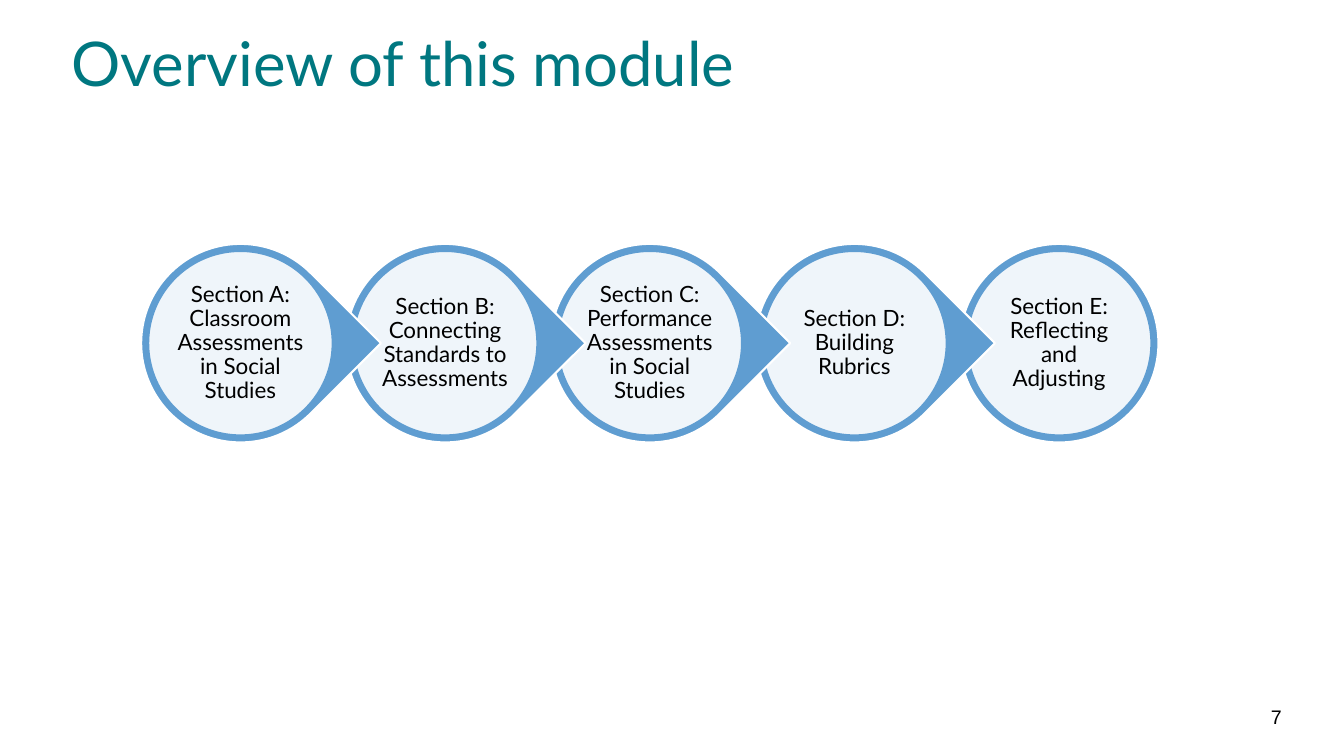
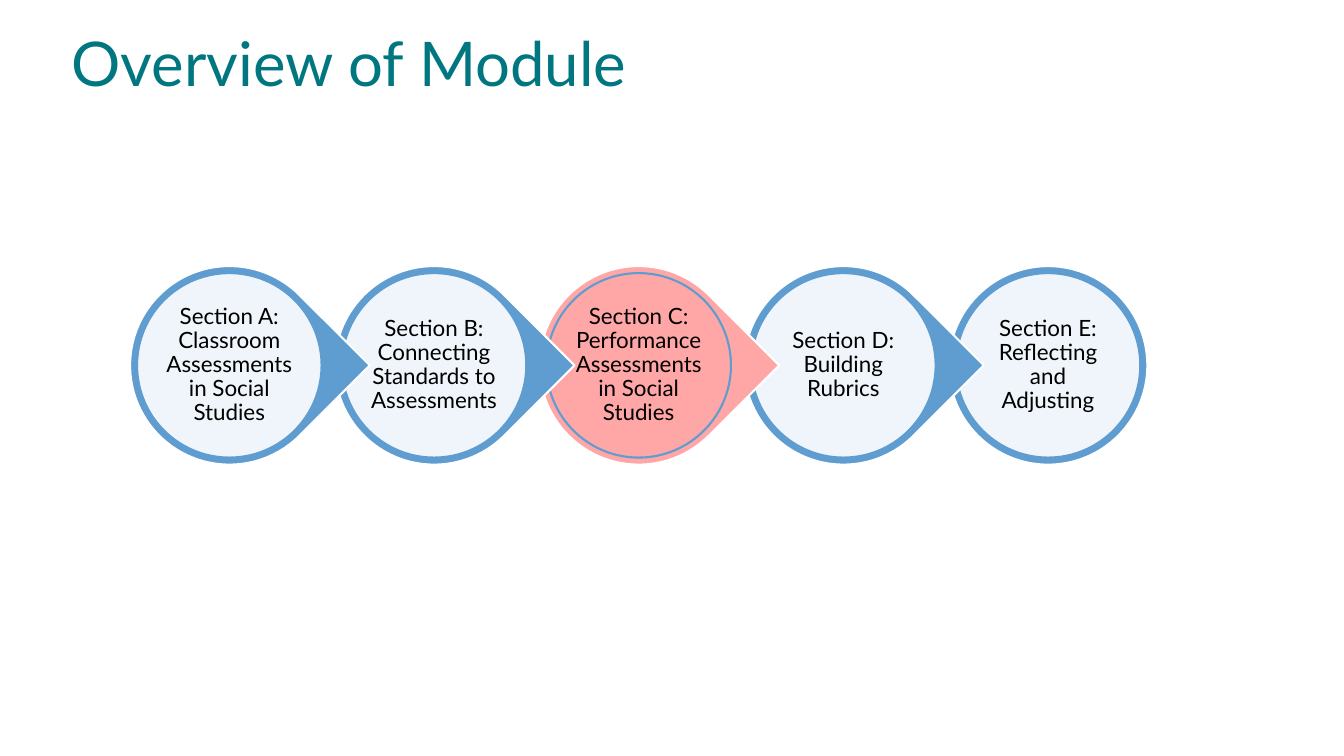
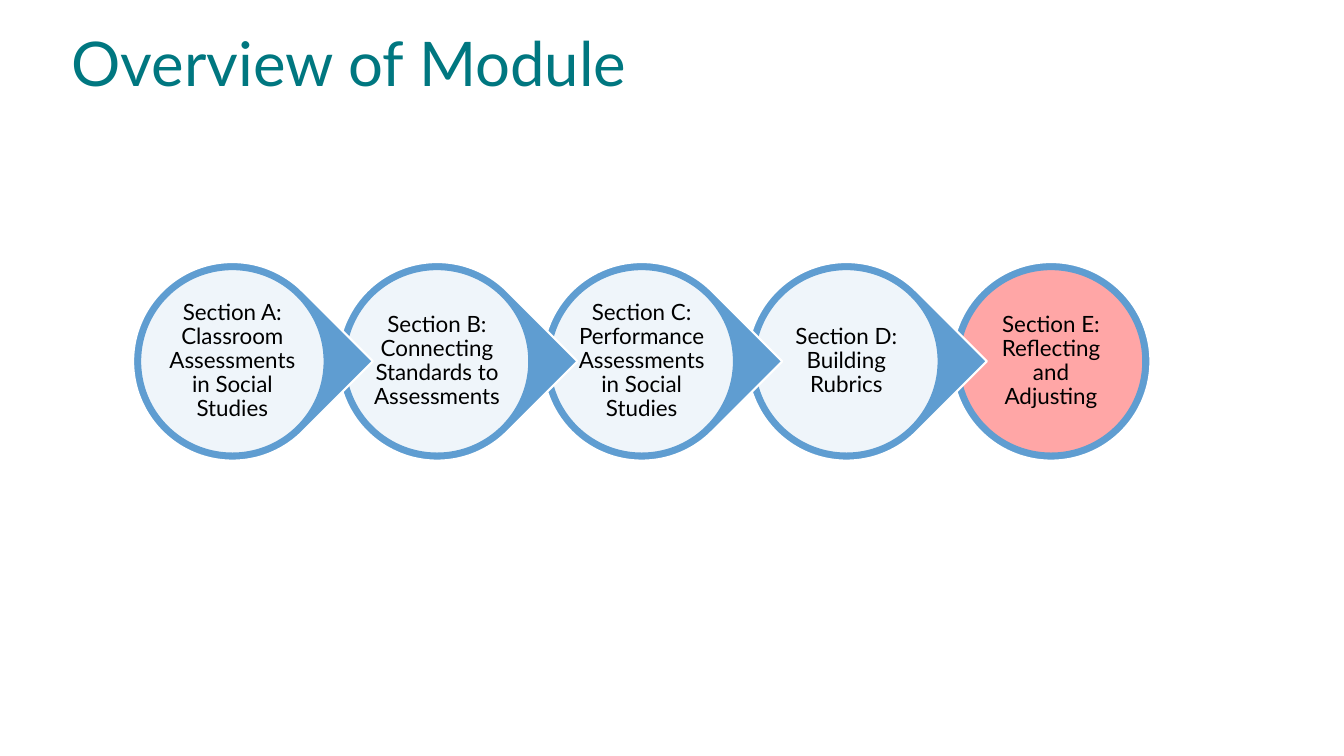
from lxml.etree import SubElement
from pptx import Presentation
from pptx.dml.color import RGBColor
from pptx.enum.shapes import MSO_SHAPE
from pptx.enum.text import MSO_ANCHOR, MSO_AUTO_SIZE, PP_ALIGN
from pptx.oxml.ns import qn
from pptx.util import Inches, Pt

TEAL = RGBColor(0x00, 0x77, 0x80)
BLUE = RGBColor(0x5F, 0x9D, 0xD1)
PINK = RGBColor(0xFF, 0xA6, 0xA6)
WHITE = RGBColor(0xFF, 0xFF, 0xFF)
BLACK = RGBColor(0x00, 0x00, 0x00)

TITLE_ONLY = 5
MARKER_SIZE = 1.97
MARKER_PITCH = 2.03
DISC_INSET = 0.07
DISC_OPACITY = 90

SECTIONS = [
    ["Section A: Classroom Assessments in Social Studies"],
    ["Section B: Connecting Standards to Assessments"],
    ["Section C: Performance Assessments in Social Studies"],
    ["Section D:", "Building Rubrics"],
    ["Section E: Reflecting and Adjusting"],
]


def write_lines(paragraph, lines, font_name, size, color):
    """Add lines to a paragraph as runs parted by line breaks."""
    for index, line in enumerate(lines):
        if index:
            paragraph.add_line_break()
        run = paragraph.add_run()
        run.text = line
        run.font.name = font_name
        run.font.size = Pt(size)
        run.font.color.rgb = color


def add_titled_slide(presentation, title_text):
    """Add a title-only slide with the shared title style."""
    slide = presentation.slides.add_slide(presentation.slide_layouts[TITLE_ONLY])
    title = slide.shapes.title
    title.left, title.top = Inches(0.61), Inches(0.28)
    title.width, title.height = Inches(9.4), Inches(1.44)
    frame = title.text_frame
    frame.auto_size = MSO_AUTO_SIZE.NONE
    frame.vertical_anchor = MSO_ANCHOR.TOP
    paragraph = frame.paragraphs[0]
    paragraph.alignment = PP_ALIGN.LEFT
    paragraph.line_spacing = 0.9
    write_lines(paragraph, [title_text], "Lato", 44, TEAL)
    return slide


def add_page_number(slide, number):
    """Add the page number at the lower right."""
    box = slide.shapes.add_textbox(Inches(12.06), Inches(6.91), Inches(0.75), Inches(0.4))
    frame = box.text_frame
    frame.word_wrap = True
    frame.vertical_anchor = MSO_ANCHOR.MIDDLE
    paragraph = frame.paragraphs[0]
    paragraph.alignment = PP_ALIGN.RIGHT
    write_lines(paragraph, [str(number)], "Arial", 14, BLACK)


def add_round_shape(group, kind, left, top, size, fill, line):
    """Add a filled, outlined shape of equal width and height."""
    shape = group.shapes.add_shape(kind, Inches(left), Inches(top), Inches(size), Inches(size))
    shape.shadow.inherit = False
    shape.fill.solid()
    shape.fill.fore_color.rgb = fill
    shape.line.color.rgb = line
    shape.line.width = Pt(1.5)
    return shape


def set_opacity(shape, percent):
    """Make the solid fill of a shape partly transparent."""
    color = shape.fill._xPr.find(qn("a:solidFill"))[0]
    SubElement(color, qn("a:alpha")).set("val", str(percent * 1000))


def add_section(group, left, top, lines, is_last, marker_fill, disc_fill):
    """Add one section: a marker pointing right and a labelled disc on it."""
    kind = MSO_SHAPE.OVAL if is_last else MSO_SHAPE.TEAR
    marker = add_round_shape(group, kind, left, top, MARKER_SIZE, marker_fill, WHITE)
    if not is_last:
        marker.rotation = 45

    disc = add_round_shape(group, MSO_SHAPE.OVAL, left + DISC_INSET, top + DISC_INSET,
                           MARKER_SIZE - 2 * DISC_INSET, disc_fill, BLUE)
    if disc_fill == WHITE:
        set_opacity(disc, DISC_OPACITY)
    frame = disc.text_frame
    frame.word_wrap = True
    frame.vertical_anchor = MSO_ANCHOR.MIDDLE
    frame.margin_left = frame.margin_right = frame.margin_top = frame.margin_bottom = 0
    paragraph = frame.paragraphs[0]
    paragraph.alignment = PP_ALIGN.CENTER
    paragraph.line_spacing = 0.9
    write_lines(paragraph, lines, "Lato", 16, BLACK)


def add_section_chain(slide, left, top, marker_fills, disc_fills):
    """Add the chain of sections, last one at the back; fills map index to colour."""
    group = slide.shapes.add_group_shape()
    last = len(SECTIONS) - 1
    for index in range(last, -1, -1):
        add_section(group, left + index * MARKER_PITCH, top, SECTIONS[index], index == last,
                    marker_fills.get(index, BLUE), disc_fills.get(index, WHITE))


def main():
    """Build the three overview slides."""
    presentation = Presentation()
    presentation.slide_width = Inches(13.33)
    presentation.slide_height = Inches(7.5)

    opening = add_titled_slide(presentation, "Overview of this module")
    add_page_number(opening, 7)
    add_section_chain(opening, 1.4, 2.42, {}, {})

    section_c = add_titled_slide(presentation, "Overview of Module")
    add_section_chain(section_c, 1.29, 2.64, {2: PINK}, {2: PINK})

    section_e = add_titled_slide(presentation, "Overview of Module")
    add_section_chain(section_e, 1.32, 2.6, {}, {4: PINK})

    presentation.save("out.pptx")


if __name__ == "__main__":
    main()
